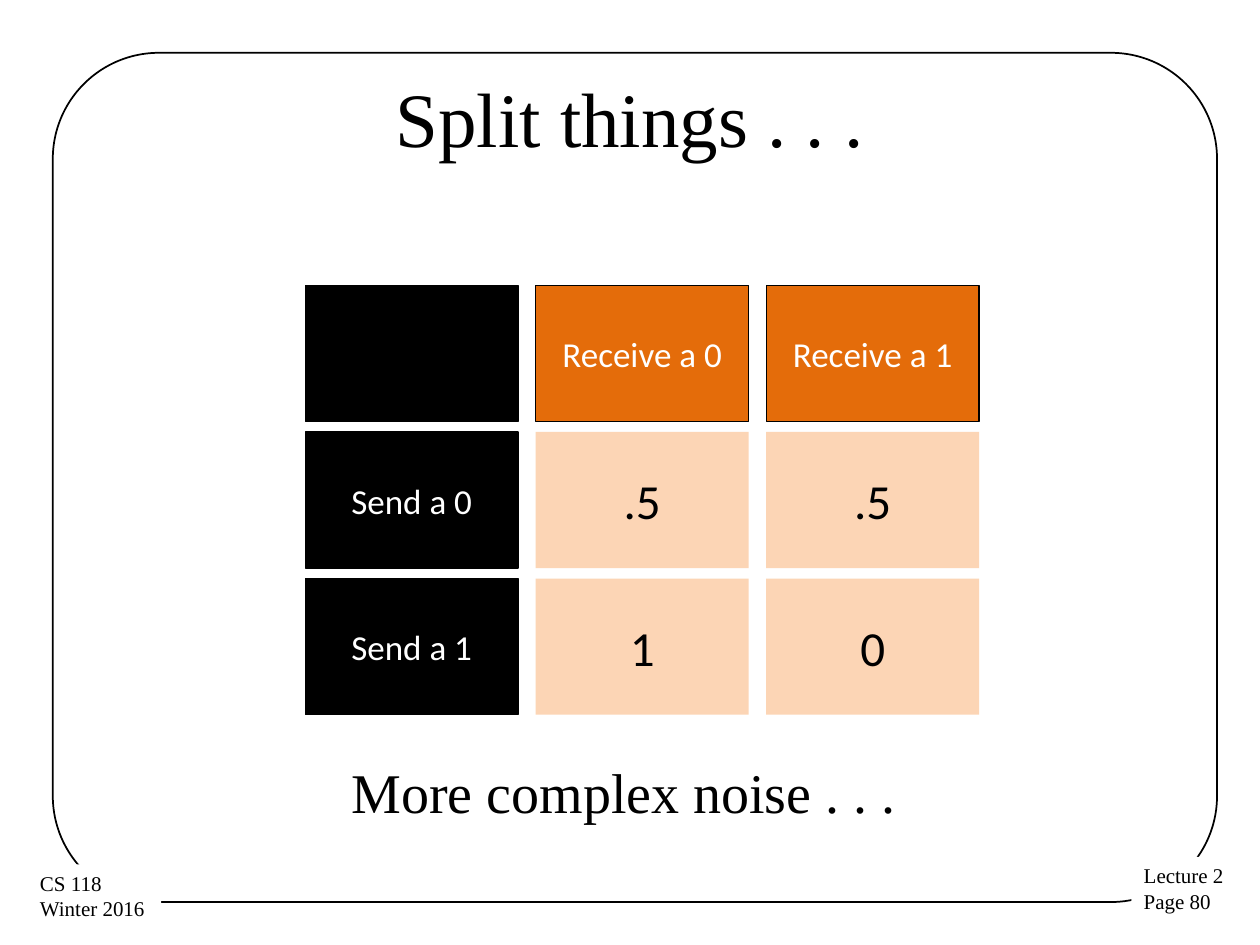
import pptx
import pptx.util
import pptx.dml.color
import pptx.enum.shapes
import pptx.enum.text

Pt = pptx.util.Pt
RGBColor = pptx.dml.color.RGBColor
SHAPE = pptx.enum.shapes.MSO_SHAPE
ALIGN = pptx.enum.text.PP_ALIGN
ANCHOR = pptx.enum.text.MSO_ANCHOR

BLACK = RGBColor(0x00, 0x00, 0x00)
WHITE = RGBColor(0xFF, 0xFF, 0xFF)
ORANGE = RGBColor(0xE4, 0x6C, 0x0A)
PEACH = RGBColor(0xFC, 0xD5, 0xB5)

SERIF = "Times New Roman"
SANS = "Calibri"

FOOTERS = [
    (["Lecture 2", "Page 80"], (646.5, 489.6, 60.5, 36.7)),
    (["CS 118", "Winter 2016"], (15.8, 493.9, 76.3, 36.7)),
]
TITLE = "Split things . . ."
CAPTION = "More complex noise . . ."
NOISE_GRID = [
    ["", "Receive a 0", "Receive a 1"],
    ["Send a 0", ".5", ".5"],
    ["Send a 1", "1", "0"],
]
GRID_LEFT, GRID_TOP = 174.4, 163
CELL_WIDTH, CELL_HEIGHT = 121.7, 77.8
COLUMN_STEP, ROW_STEP = 131.7, 83.8


def write(shape, lines, font, size, color, align, anchor, wrap=True):
    frame = shape.text_frame
    frame.word_wrap = wrap
    frame.vertical_anchor = anchor
    frame.text = "\n".join(lines)
    for para in frame.paragraphs:
        para.alignment = align
        para.font.name = font
        para.font.size = Pt(size)
        para.font.color.rgb = color


def add_box(page, kind, place, fill=None, line_width=None):
    box = page.shapes.add_shape(kind, *map(Pt, place))
    box.shadow.inherit = False
    if fill is None:
        box.fill.background()
    else:
        box.fill.solid()
        box.fill.fore_color.rgb = fill
    if line_width is None:
        box.line.fill.background()
    else:
        box.line.color.rgb = BLACK
        box.line.width = Pt(line_width)
    return box


def add_text(page, place, text, size, align, anchor, wrap):
    box = page.shapes.add_textbox(*map(Pt, place))
    write(box, [text], SERIF, size, BLACK, align, anchor, wrap)


def add_noise_grid(page):
    for row, labels in enumerate(NOISE_GRID):
        for column, label in enumerate(labels):
            place = (GRID_LEFT + column * COLUMN_STEP, GRID_TOP + row * ROW_STEP,
                     CELL_WIDTH, CELL_HEIGHT)
            header = row == 0 or column == 0
            fill = BLACK if column == 0 else ORANGE if row == 0 else PEACH
            cell = add_box(page, SHAPE.RECTANGLE, place, fill, 0.75 if header else None)
            if label:
                write(cell, [label], SANS, 20 if header else 28,
                      WHITE if header else BLACK, ALIGN.CENTER, ANCHOR.MIDDLE)


def main():
    deck = pptx.Presentation()
    deck.slide_width, deck.slide_height = Pt(720), Pt(540)
    page = deck.slides.add_slide(deck.slide_layouts[6])

    border = add_box(page, SHAPE.ROUNDED_RECTANGLE, (30.2, 30.2, 665.3, 485.3), line_width=1)
    border.adjustments[0] = 0.125
    for lines, place in FOOTERS:
        footer = add_box(page, SHAPE.RECTANGLE, place, WHITE)
        write(footer, lines, SERIF, 12, BLACK, ALIGN.LEFT, ANCHOR.TOP, False)

    add_text(page, (36, 21.6, 648, 90), TITLE, 44, ALIGN.CENTER, ANCHOR.MIDDLE, True)
    add_noise_grid(page)
    add_text(page, (193.7, 429.1, 328.3, 46.1), CAPTION, 32, ALIGN.LEFT, ANCHOR.TOP, False)
    deck.save("out.pptx")


if __name__ == "__main__":
    main()
